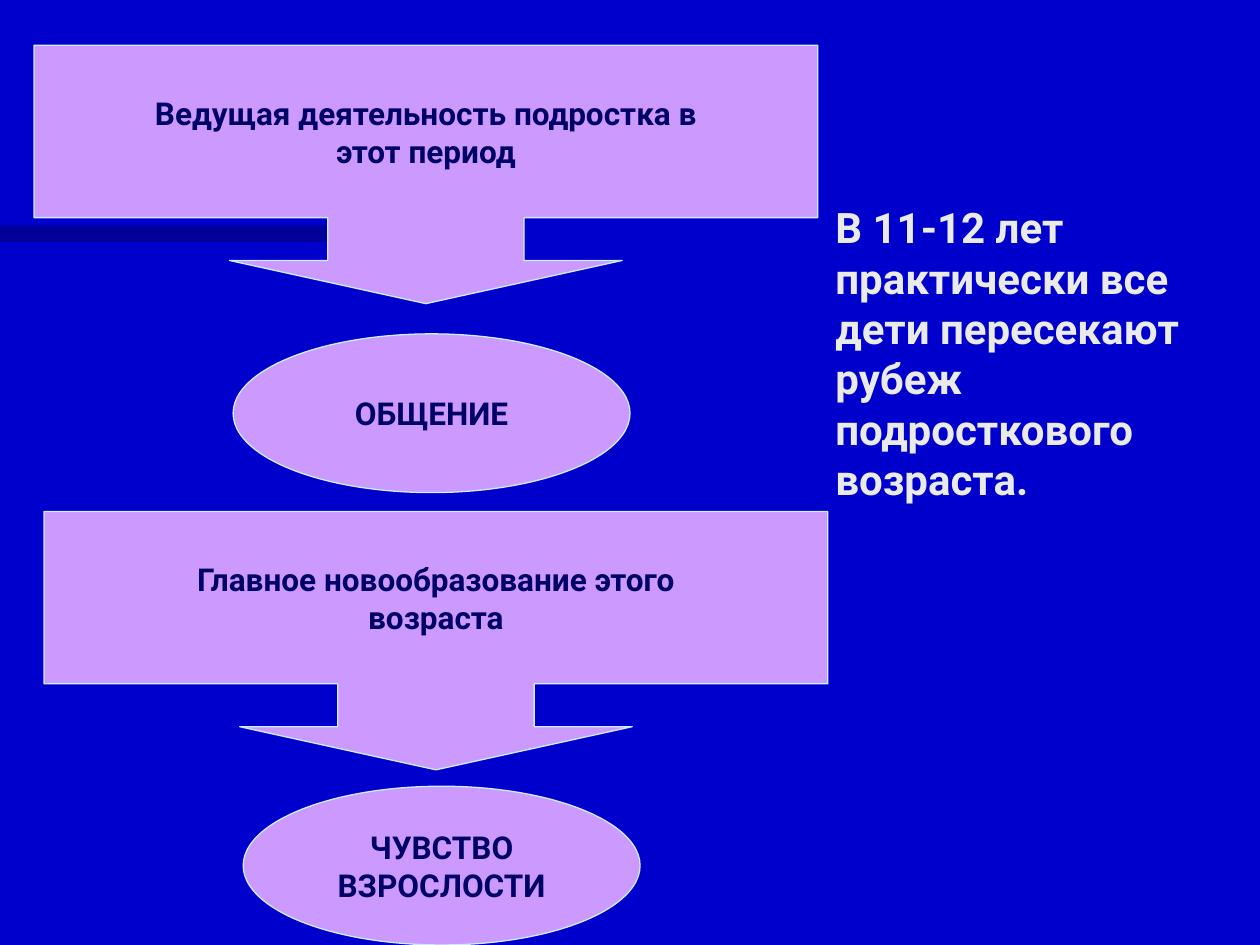
from lxml import etree
from pptx import Presentation
from pptx.dml.color import RGBColor
from pptx.enum import shapes, text
from pptx.oxml.ns import qn
from pptx.util import Inches, Pt

# Content: callout text, ellipse text, left and top of callout, top of ellipse
STEPS = [
    (["Ведущая деятельность подростка в", "этот период"], ["ОБЩЕНИЕ"], 0.27, 0.36, 2.65),
    (["Главное новообразование этого", "возраста"], ["ЧУВСТВО", "ВЗРОСЛОСТИ"], 0.35, 4.06, 6.24),
]
STATEMENT = "В 11-12 лет практически все дети пересекают рубеж подросткового возраста."

THEME = {
    "font": "Roboto", "body_size": 24, "label_size": 18,
    "background": "0000CC", "bar": "000066", "bar_alpha": 50,
    "fill": "CC99FF", "line": "CCECFF", "label": "000066", "body": "EAEAEA",
}
CALLOUT_SIZE = (6.22, 2.05)
ELLIPSE_SIZE = (3.15, 1.26)
ELLIPSE_OFFSET = 1.58
CALLOUT_ADJ = (0.76, 0.76, 0.167, 0.667)


def color(name):
    return RGBColor.from_string(THEME[name])


def style_font(p, size, name):
    formats = {"name": THEME["font"], "size": Pt(THEME[size]), "bold": True}
    for r in p.runs:
        for key, value in formats.items():
            setattr(r.font, key, value)
        r.font.color.rgb = color(name)


def add_shape(slide, kind, box, fill):
    sp = slide.shapes.add_shape(kind, *map(Inches, box))
    sp.shadow.inherit = False
    sp.fill.solid()
    sp.fill.fore_color.rgb = color(fill)
    return sp


def add_label(slide, kind, box, lines):
    sp = add_shape(slide, kind, box, "fill")
    sp.line.color.rgb = color("line")
    sp.line.width = Pt(0.75)
    tf = sp.text_frame
    tf.word_wrap = False
    tf.vertical_anchor = text.MSO_ANCHOR.MIDDLE
    tf.text = "\n".join(lines)
    for p in tf.paragraphs:
        p.alignment = text.PP_ALIGN.CENTER
        style_font(p, "label_size", "label")
    return sp


prs = Presentation()
prs.slide_width, prs.slide_height = Inches(10), Inches(7.5)
slide = prs.slides.add_slide(prs.slide_layouts[1])
slide.background.fill.solid()
slide.background.fill.fore_color.rgb = color("background")

# The slide has no title
title = slide.shapes.title._element
title.getparent().remove(title)

# Translucent bar behind everything
bar = add_shape(slide, shapes.MSO_SHAPE.RECTANGLE, (0, 1.79, 3.66, 0.13), "bar")
bar.line.fill.background()
rgb = bar._element.spPr.find(qn("a:solidFill")).find(qn("a:srgbClr"))
etree.SubElement(rgb, qn("a:alpha")).set("val", str(THEME["bar_alpha"] * 1000))
slide.shapes._spTree.insert(2, bar._element)

# Statement on the right
body = slide.placeholders[1]
body.left, body.top, body.width, body.height = map(Inches, (6.53, 1.55, 3.47, 3.1))
tf = body.text_frame
tf.text = STATEMENT
tf.word_wrap = True
tf.auto_size = text.MSO_AUTO_SIZE.SHAPE_TO_FIT_TEXT
tf.vertical_anchor = text.MSO_ANCHOR.TOP
p = tf.paragraphs[0]
pPr = p._p.get_or_add_pPr()
pPr.set("marL", "0")
pPr.set("indent", "0")
etree.SubElement(pPr, qn("a:buNone"))
p.space_before = Pt(0)
style_font(p, "body_size", "body")

# Callouts, each pointing down to its ellipse
for heading, result, left, top, ellipse_top in STEPS:
    callout = add_label(slide, shapes.MSO_SHAPE.DOWN_ARROW_CALLOUT,
                        (left, top, *CALLOUT_SIZE), heading)
    for i, value in enumerate(CALLOUT_ADJ):
        callout.adjustments[i] = value
    add_label(slide, shapes.MSO_SHAPE.OVAL,
              (left + ELLIPSE_OFFSET, ellipse_top, *ELLIPSE_SIZE), result)

prs.save("out.pptx")
